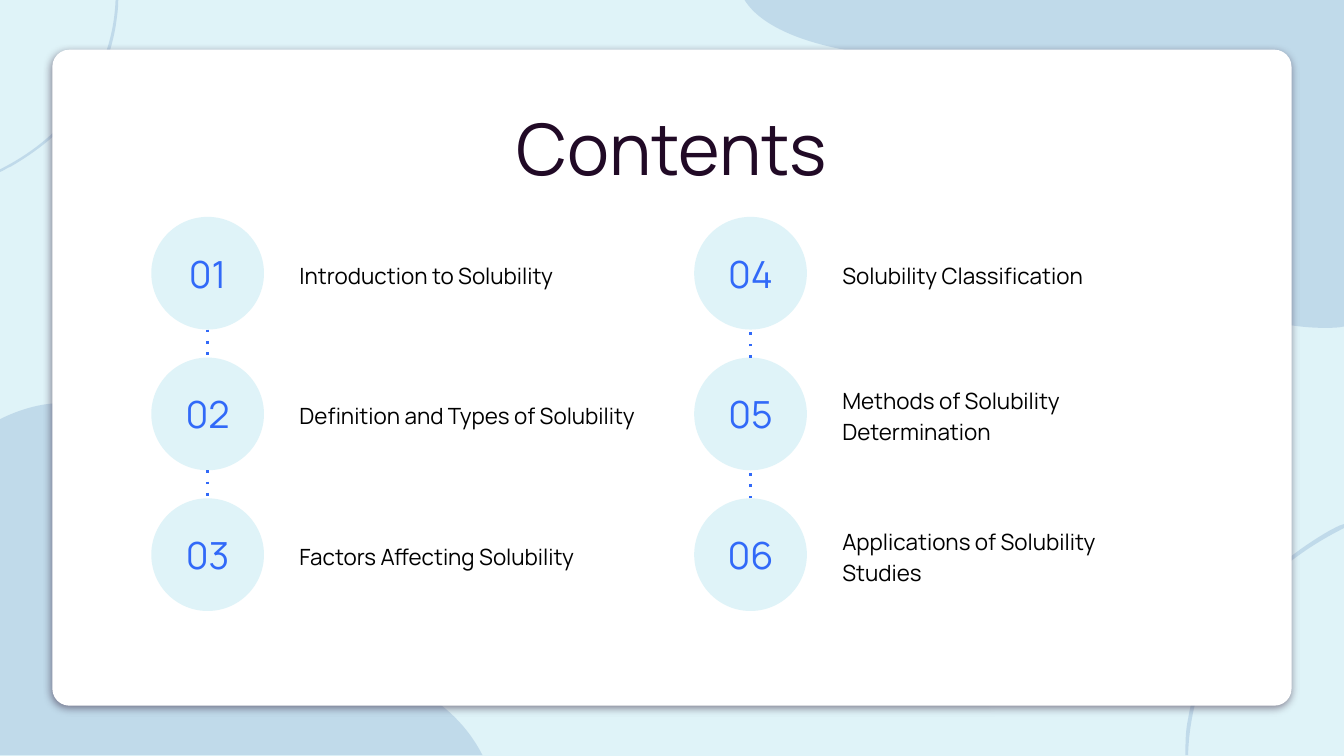
from pptx import Presentation, oxml
from pptx import util as u
from pptx.dml import color
from pptx.enum import dml, shapes, text
from pptx.oxml import ns

INK = {
    "sky": "DFF3F8",
    "blob": "A0BFDB",
    "card": "FFFFFF",
    "title": "210A26",
    "body": "000000",
    "blue": "3169F8",
}
UNIT = u.Cm(2.54)
SIZE = 2.13
TOP = 4.1
PITCH = 2.66

WAVES = [
    [(8.84, 5.62), (8.85, 5.26, 8.97, 4.9, 9.18, 4.61),
     (9.4, 4.31, 9.68, 4.09, 10, 3.93), (10, 3.9),
     (9.96, 3.91, 9.93, 3.93, 9.89, 3.95), (9.63, 4.1, 9.4, 4.29, 9.21, 4.53),
     (9.02, 4.77, 8.89, 5.05, 8.84, 5.35), (8.82, 5.44, 8.82, 5.53, 8.82, 5.62)],
    [(0.45, 3), (0.22, 3, 0, 3.12, 0, 3.12), (0, 5.62), (3.59, 5.62),
     (3.13, 4.72, 1.71, 4.89, 1.12, 4.71), (0.53, 4.53, 1.18, 3.67, 0.86, 3.2),
     (0.75, 3.05, 0.6, 3, 0.45, 3)],
    [(5.54, 0), (5.7, 0.26, 6.24, 0.44, 7.12, 0.44),
     (7.15, 0.44, 7.18, 0.44, 7.22, 0.44), (7.23, 0.44, 7.24, 0.44, 7.25, 0.44),
     (8.57, 0.44, 8.01, 1.59, 8.99, 2.2), (9.25, 2.37, 9.6, 2.44, 9.85, 2.44),
     (9.91, 2.44, 9.96, 2.44, 10, 2.43), (10, 0)],
    [(0.86, 0), (0.85, 0.27, 0.76, 0.54, 0.6, 0.75),
     (0.45, 0.97, 0.24, 1.14, 0, 1.26), (0, 1.28),
     (0.03, 1.27, 0.05, 1.25, 0.08, 1.24), (0.27, 1.13, 0.45, 0.99, 0.59, 0.81),
     (0.73, 0.64, 0.82, 0.43, 0.86, 0.2), (0.87, 0.13, 0.88, 0.07, 0.88, 0)],
]

COLUMNS = [
    (2.86, [("Introduction to Solubility", 6.84),
            ("Definition and Types of Solubility", 7.29),
            ("Factors Affecting Solubility", 6.84)]),
    (13.12, [("Solubility Classification", 6.84),
             ("Methods of Solubility Determination", 6.84),
             ("Applications of Solubility Studies", 6.84)]),
]


def rgb(name):
    return color.RGBColor.from_string(INK[name])


def cms(*vals):
    return [u.Cm(val) for val in vals]


def paint(shape, name):
    shape.shadow.inherit = False
    shape.fill.solid()
    shape.fill.fore_color.rgb = rgb(name)
    shape.line.fill.background()


def put(shape, words, size, ink, align=text.PP_ALIGN.LEFT,
        anchor=text.MSO_ANCHOR.MIDDLE, space=1.15):
    frame = shape.text_frame
    frame.word_wrap = True
    frame.auto_size = text.MSO_AUTO_SIZE.NONE
    frame.vertical_anchor = anchor
    frame.margin_left = frame.margin_right = u.Cm(0.25)
    frame.margin_top = frame.margin_bottom = u.Cm(0.25)
    para = frame.paragraphs[0]
    para.alignment = align
    para.line_spacing = space
    run = para.add_run()
    run.text = words
    run.font.size = u.Pt(size)
    run.font.name = "Manrope"
    run.font.color.rgb = rgb(ink)


def bend(wave, path):
    lines = iter(wave._element.findall(".//" + ns.qn("a:lnTo")))
    for part in path[1:]:
        first = next(lines)
        if len(part) == 6:
            curve = oxml.parse_xml(f'<a:cubicBezTo {ns.nsdecls("a")}/>')
            first.addprevious(curve)
            for line in (first, next(lines), next(lines)):
                curve.append(line[0])
                line.getparent().remove(line)


def add_wave(slide, path):
    spots = [(round(part[i] * UNIT), round(part[i + 1] * UNIT))
             for part in path for i in range(0, len(part), 2)]
    pen = slide.shapes.build_freeform(*spots[0])
    pen.add_line_segments(spots[1:], close=True)
    wave = pen.convert_to_shape()
    bend(wave, path)
    paint(wave, "blob")
    tint = wave._element.spPr.find(".//" + ns.qn("a:srgbClr"))
    tint.append(oxml.parse_xml(f'<a:alpha {ns.nsdecls("a")} val="48000"/>'))


def add_card(slide):
    card = slide.shapes.add_shape(
        shapes.MSO_SHAPE.ROUNDED_RECTANGLE, *cms(0.99, 0.94, 23.42, 12.4))
    card.adjustments[0] = 0.026
    paint(card, "card")
    glow = card._element.spPr.find(ns.qn("a:effectLst"))
    glow.append(oxml.parse_xml(
        f'<a:outerShdw {ns.nsdecls("a")} blurRad="{u.Pt(4.5)}" dist="{u.Pt(1.5)}" '
        f'dir="5400000" algn="bl" rotWithShape="0"><a:srgbClr val="{INK["title"]}">'
        '<a:alpha val="50000"/></a:srgbClr></a:outerShdw>'))


def add_title(slide, words):
    title = slide.shapes.title
    title.left, title.top, title.width, title.height = cms(1.98, 1.49, 21.44, 1.98)
    put(title, words, 38, "title", text.PP_ALIGN.CENTER, text.MSO_ANCHOR.TOP)
    title._element.getparent().append(title._element)


def add_item(slide, num, words, x, y, width):
    label = slide.shapes.add_textbox(*cms(x + 2.55, y, width, SIZE))
    put(label, words, 12, "body")
    disc = slide.shapes.add_shape(shapes.MSO_SHAPE.OVAL, *cms(x, y, SIZE, SIZE))
    paint(disc, "sky")
    put(disc, f"{num:02}", 20, "blue", text.PP_ALIGN.CENTER, space=1.0)


def add_link(slide, x, start, end):
    link = slide.shapes.add_connector(
        shapes.MSO_CONNECTOR.STRAIGHT, *cms(x, start, x, end))
    link.line.color.rgb = rgb("blue")
    link.line.width = u.Pt(1.5)
    link.line.dash_style = dml.MSO_LINE.ROUND_DOT
    link._element.spPr.find(".//" + ns.qn("a:prstDash")).set("val", "dot")
    link._element.spPr.append(oxml.parse_xml(f'<a:effectLst {ns.nsdecls("a")}/>'))


def main():
    deck = Presentation()
    deck.slide_width, deck.slide_height = cms(25.4, 14.29)
    slide = deck.slides.add_slide(deck.slide_layouts[5])
    slide.background.fill.solid()
    slide.background.fill.fore_color.rgb = rgb("sky")
    for path in WAVES:
        add_wave(slide, path)
    add_card(slide)
    add_title(slide, "Contents")
    for col, (x, items) in enumerate(COLUMNS):
        for row, (words, width) in enumerate(items):
            num = col * len(items) + row + 1
            add_item(slide, num, words, x, TOP + row * PITCH, width)
    for col, (x, items) in enumerate(COLUMNS):
        for row in range(1, len(items)):
            y = TOP + row * PITCH
            ends = (y, y - PITCH + SIZE) if col else (y - PITCH + SIZE, y)
            add_link(slide, x + SIZE / 2, *ends)
    deck.save("out.pptx")


if __name__ == "__main__":
    main()
